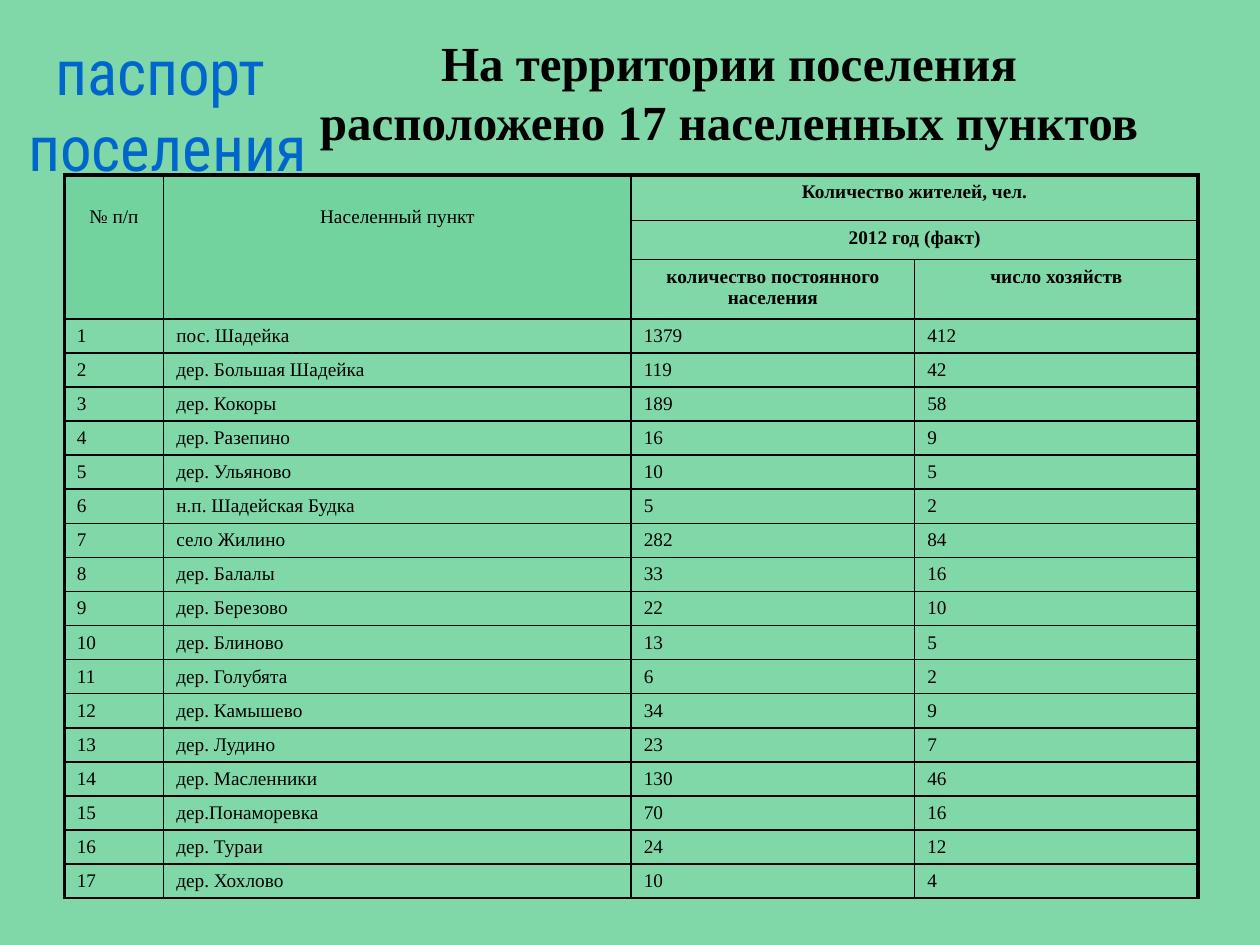
from dataclasses import dataclass

from lxml import etree
from pptx import Presentation
from pptx.dml.color import RGBColor
from pptx.enum.text import MSO_ANCHOR, PP_ALIGN
from pptx.oxml.ns import qn
from pptx.util import Inches, Pt

CENTER, JUSTIFY = PP_ALIGN.CENTER, PP_ALIGN.JUSTIFY
TOP = MSO_ANCHOR.TOP
TITLE_ONLY = 5


@dataclass(frozen=True)
class Theme:
    background: str = "80D7A7"
    header_fill: str = "73D39E"
    text: str = "000000"
    accent: str = "0066CC"
    serif: str = "Times New Roman"
    condensed: str = "Roboto Condensed"
    title_size: float = 28
    label_size: float = 36
    table_size: float = 11
    thin: float = 1
    thick: float = 2.25


THEME = Theme()

COLUMN_WIDTHS = [0.79, 3.71, 2.25, 2.25]
HEADER_HEIGHTS = [0.36, 0.31, 0.47]
DATA_HEIGHT = 0.27

# Settlement, permanent residents, households
SETTLEMENTS = [
    ("пос. Шадейка ", 1379, 412),
    ("дер. Большая Шадейка", 119, 42),
    ("дер. Кокоры", 189, 58),
    ("дер. Разепино", 16, 9),
    ("дер. Ульяново", 10, 5),
    ("н.п. Шадейская Будка", 5, 2),
    ("село Жилино", 282, 84),
    ("дер. Балалы", 33, 16),
    ("дер. Березово", 22, 10),
    ("дер. Блиново", 13, 5),
    ("дер. Голубята", 6, 2),
    ("дер. Камышево", 34, 9),
    ("дер. Лудино", 23, 7),
    ("дер. Масленники", 130, 46),
    ("дер.Понаморевка", 70, 16),
    ("дер. Тураи", 24, 12),
    ("дер. Хохлово", 10, 4),
]

# Row, column, last row, last column, text
HEADERS = [
    (0, 0, 2, 0, "№ п/п"),
    (0, 1, 2, 1, "Населенный пункт"),
    (0, 2, 0, 3, "Количество жителей, чел."),
    (1, 2, 1, 3, "2012 год (факт)"),
    (2, 2, 2, 2, "количество постоянного населения"),
    (2, 3, 2, 3, "число хозяйств"),
]


def format_paragraph(paragraph, size, font, color, alignment, bold=False):
    paragraph.alignment = alignment
    paragraph.font.size = Pt(size)
    paragraph.font.name = font
    paragraph.font.bold = bold
    paragraph.font.color.rgb = RGBColor.from_string(color)


def set_title(slide):
    title = slide.shapes.title
    title.left, title.top = Inches(2.24), Inches(0.21)
    title.width, title.height = Inches(7.09), Inches(1.04)
    title.text_frame.text = "На территории поселения расположено 17 населенных пунктов"
    title.text_frame.vertical_anchor = TOP
    format_paragraph(title.text_frame.paragraphs[0], THEME.title_size, THEME.serif,
                     THEME.text, CENTER, True)


def add_label(slide):
    label = slide.shapes.add_textbox(Inches(0.08), Inches(0.21), Inches(2.5), Inches(1.02))
    label.text_frame.word_wrap = False
    label.text_frame.text = "паспорт \nпоселения"
    for paragraph in label.text_frame.paragraphs:
        format_paragraph(paragraph, THEME.label_size, THEME.condensed, THEME.accent, CENTER)


def set_borders(cell, widths):
    properties = cell._tc.get_or_add_tcPr()
    for side, width in widths.items():
        line = etree.SubElement(properties, qn(f"a:ln{side}"), w=str(Pt(width)))
        fill = etree.SubElement(line, qn("a:solidFill"))
        etree.SubElement(fill, qn("a:srgbClr"), val=THEME.text)


def write_cell(cell, text, alignment, bold=False):
    cell.text = str(text)
    format_paragraph(cell.text_frame.paragraphs[0], THEME.table_size, THEME.serif,
                     THEME.text, alignment, bold)


def merge_headers(table):
    for top, left, bottom, right, _ in HEADERS:
        if (top, left) != (bottom, right):
            table.cell(top, left).merge(table.cell(bottom, right))


def style_grid(table):
    for row_index, row in enumerate(table.rows):
        for column_index, cell in enumerate(row.cells):
            right_edge = column_index + cell.span_width
            set_borders(cell, {
                "L": THEME.thick if column_index == 0 else THEME.thin,
                "R": THEME.thick if right_edge == len(COLUMN_WIDTHS) else THEME.thin,
                "T": THEME.thick if row_index == 0 else THEME.thin,
                "B": THEME.thin,
            })
            cell.fill.background()


def add_settlement_table(slide):
    heights = HEADER_HEIGHTS + [DATA_HEIGHT] * len(SETTLEMENTS)
    table = slide.shapes.add_table(
        len(heights), len(COLUMN_WIDTHS), Inches(0.51), Inches(1.39),
        Inches(sum(COLUMN_WIDTHS)), Inches(sum(heights))).table
    table.first_row = table.horz_banding = False
    for column, width in zip(table.columns, COLUMN_WIDTHS):
        column.width = Inches(width)
    for row, height in zip(table.rows, heights):
        row.height = Inches(height)
    merge_headers(table)
    style_grid(table)

    # Header block
    for top, left, bottom, _, text in HEADERS:
        cell = table.cell(top, left)
        tall = bottom > top
        write_cell(cell, text, CENTER, bold=not tall)
        if tall:
            cell.margin_top = Inches(0.25)
            cell.fill.solid()
            cell.fill.fore_color.rgb = RGBColor.from_string(THEME.header_fill)

    # Numbered settlements
    for number, settlement in enumerate(SETTLEMENTS, start=1):
        row_index = len(HEADER_HEIGHTS) + number - 1
        for column_index, value in enumerate((number, *settlement)):
            write_cell(table.cell(row_index, column_index), value, JUSTIFY)


def main():
    presentation = Presentation()
    presentation.slide_width, presentation.slide_height = Inches(10), Inches(7.5)
    slide = presentation.slides.add_slide(presentation.slide_layouts[TITLE_ONLY])
    slide.background.fill.solid()
    slide.background.fill.fore_color.rgb = RGBColor.from_string(THEME.background)
    add_settlement_table(slide)
    set_title(slide)
    add_label(slide)
    presentation.save("out.pptx")


if __name__ == "__main__":
    main()
